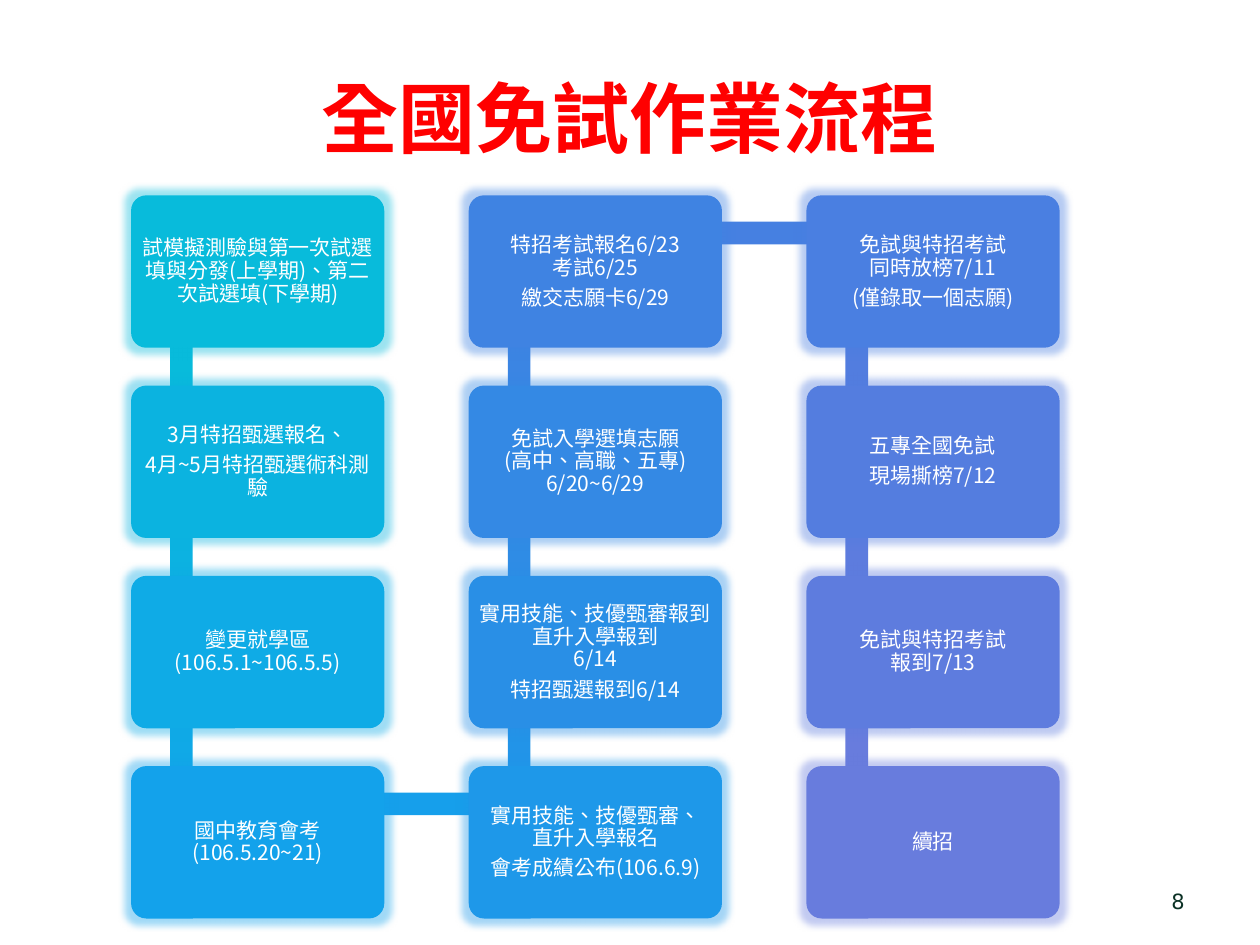
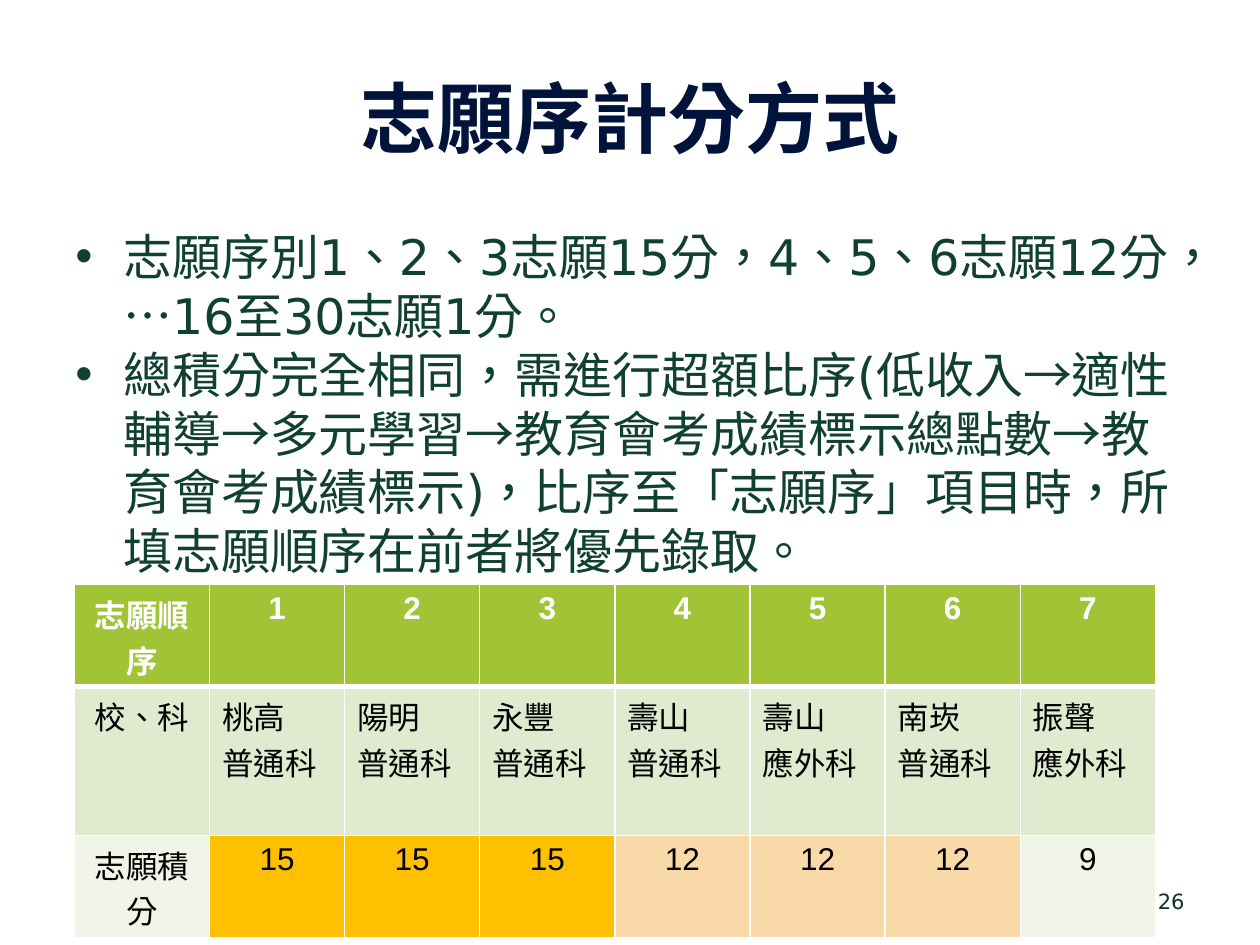
from copy import deepcopy

from lxml.etree import SubElement
from pptx import Presentation
from pptx.dml.color import RGBColor
from pptx.enum.shapes import MSO_SHAPE as Shape
from pptx.enum.text import MSO_ANCHOR as Anchor, PP_ALIGN as Align
from pptx.oxml.ns import qn
from pptx.util import Inches, Pt

SANS, CJK_SC, CJK_TC = "DejaVu Sans", "Noto Sans CJK SC", "Noto Sans CJK TC"
WHITE, BLACK, RED, NAVY = "FFFFFF", "000000", "FF0000", "00133A"
BODY_GREEN, PAGE_GREEN = "104031", "0C3226"
HEADER_GREEN, SCHOOL_GREEN, PALE_GREEN = "A0C435", "DFEACE", "F0F5E8"
GOLD, PEACH = "FFC000", "FAD9A8"

BOX_WIDTH, BOX_HEIGHT = 2.01, 1.21
LEFT, TOP, COLUMN_STEP, ROW_STEP = 1.04, 1.55, 2.68, 1.51
BAR_THICKNESS = 0.18
TABLE_ROW_HEIGHTS = (0.81, 1.18, 0.81)

# Paragraphs of the step, colour of its box, colour of the bar to the next step
STEPS = [
    (["試模擬測驗與第一次試選填與分發(上學期)、第二次試選填(下學期)"], "08BBDB", "08BBDB"),
    (["3月特招甄選報名、", "4月~5月特招甄選術科測驗"], "0BB3E0", "0CB2E1"),
    (["變更就學區(106.5.1~106.5.5)"], "0FABE6", "10A9E7"),
    (["國中教育會考(106.5.20~21)"], "13A2EB", "169FEB"),
    (["實用技能、技優甄審、\n直升入學報名", "會考成績公布(106.6.9)"], "1E98E9", "2294E8"),
    (["實用技能、技優甄審報到\n直升入學報到\n6/14", "特招甄選報到6/14"], "298FE6", "2F8CE5"),
    (["免試入學選填志願\n(高中、高職、五專)\n6/20~6/29"], "3489E4", "3B85E3"),
    (["特招考試報名6/23\n考試6/25", "繳交志願卡6/29"], "3F83E2", "4680E1"),
    (["免試與特招考試\n同時放榜7/11", "(僅錄取一個志願)"], "4A7FE1", "527DDF"),
    (["五專全國免試", "現場撕榜7/12"], "547DDF", "5D7CDE"),
    (["免試與特招考試\n報到7/13"], "5E7CDE", "687CDD"),
    (["續招"], "687CDD", None),
]

RULES = [
    "志願序別1、2、3志願15分，4、5、6志願12分，…16至30志願1分。",
    "總積分完全相同，需進行超額比序(低收入→適性輔導→多元學習→教育會考成績標示總點數→"
    "教育會考成績標示)，比序至「志願序」項目時，所填志願順序在前者將優先錄取。",
]

CHOICES = [
    ("桃高\n普通科", 15), ("陽明\n普通科", 15), ("永豐\n普通科", 15), ("壽山\n普通科", 12),
    ("壽山\n應外科", 12), ("南崁\n普通科", 12), ("振聲\n應外科", 9),
]
SCORE_FILLS = {15: GOLD, 12: PEACH, 9: PALE_GREEN}


def rgb(value):
    return RGBColor.from_string(value)


def set_attributes(target, values):
    for name, value in values.items():
        setattr(target, name, value)


def write(frame, paragraphs, size, color, latin, east_asian, bold=False, bullet=False, **layout):
    """Fill a text frame; layout holds paragraph attributes such as alignment."""
    for index, text in enumerate(paragraphs):
        paragraph = frame.paragraphs[0] if index == 0 else frame.add_paragraph()
        if bullet:
            add_bullet(paragraph)
        paragraph.text = text
        set_attributes(paragraph, layout)
        for run in paragraph.runs:
            set_attributes(run.font, {"size": Pt(size), "bold": bold, "name": latin})
            run.font.color.rgb = rgb(color)
            run.font._element.set("lang", "zh-TW")
            SubElement(run.font._element, qn("a:ea"), typeface=east_asian)
        for line_break in paragraph._p.findall(qn("a:br")):
            line_break.insert(0, deepcopy(paragraph.runs[0].font._element))


def add_bullet(paragraph):
    properties = paragraph._p.get_or_add_pPr()
    properties.set("marL", str(Inches(0.38)))
    properties.set("indent", str(Inches(-0.38)))
    SubElement(properties, qn("a:buFont"), typeface="Arial")
    SubElement(properties, qn("a:buChar"), char="•")


def add_text(slide, place, paragraphs, anchor=Anchor.MIDDLE, **style):
    frame = slide.shapes.add_textbox(*map(Inches, place)).text_frame
    set_attributes(frame, {"word_wrap": True, "vertical_anchor": anchor})
    write(frame, paragraphs, **style)


def add_slide(presentation, title, title_color, title_font, page_number):
    """Add a blank slide with the shared title and page number."""
    slide = presentation.slides.add_slide(presentation.slide_layouts[6])
    add_text(slide, (0.5, 0.3, 9, 1.25), [title], size=44, color=title_color, bold=True,
             latin=title_font, east_asian=CJK_SC, alignment=Align.CENTER)
    add_text(slide, (7.17, 6.95, 2.33, 0.4), [page_number], size=12, color=PAGE_GREEN,
             latin=SANS, east_asian=CJK_TC, alignment=Align.RIGHT)
    return slide


def add_block(slide, kind, place, color):
    shape = slide.shapes.add_shape(kind, *map(Inches, place))
    shape.shadow.inherit = False
    shape.fill.solid()
    shape.fill.fore_color.rgb = rgb(color)
    shape.line.fill.background()
    return shape


def add_glow(shape, color):
    effects = shape._element.spPr.find(qn("a:effectLst"))
    glow = SubElement(effects, qn("a:glow"), rad=str(Pt(8)))
    glow_color = SubElement(glow, qn("a:srgbClr"), val=color)
    SubElement(glow_color, qn("a:alpha"), val="40000")


def add_step_box(slide, left, top, paragraphs, color):
    box = add_block(slide, Shape.ROUNDED_RECTANGLE, (left, top, BOX_WIDTH, BOX_HEIGHT), color)
    box.adjustments[0] = 0.1
    add_glow(box, color)
    frame = box.text_frame
    set_attributes(frame, dict.fromkeys(("margin_left", "margin_right"), Inches(0.01)))
    set_attributes(frame, dict.fromkeys(("margin_top", "margin_bottom"), Inches(0.05)))
    set_attributes(frame, {"word_wrap": True, "vertical_anchor": Anchor.MIDDLE})
    write(frame, paragraphs, 12, WHITE, CJK_SC, CJK_SC, alignment=Align.CENTER,
          line_spacing=Pt(13), space_after=Pt(4.2))


def add_bar(slide, start, end, color):
    """Join two neighbouring boxes, given by their top left corners."""
    left, top = min(start, end)
    if start[0] == end[0]:
        place = (left + 0.31, top + 0.3, BAR_THICKNESS, ROW_STEP)
    else:
        place = (left + 0.41, top + 0.21, COLUMN_STEP, BAR_THICKNESS)
    add_block(slide, Shape.RECTANGLE, place, color)


def step_corner(index):
    """Steps run down the first column, up the second and down the third."""
    column, row = divmod(index, 4)
    if column == 1:
        row = 3 - row
    return LEFT + column * COLUMN_STEP, TOP + row * ROW_STEP


def add_flow(slide):
    for index, (paragraphs, color, bar_color) in enumerate(STEPS):
        corner = step_corner(index)
        if bar_color:
            add_bar(slide, corner, step_corner(index + 1), bar_color)
        add_step_box(slide, *corner, paragraphs, color)


def add_borders(cell, top, bottom):
    properties = cell._tc.get_or_add_tcPr()
    for side, width in {"L": 1, "R": 1, "T": top, "B": bottom}.items():
        line = SubElement(properties, qn(f"a:ln{side}"), w=str(Pt(width)))
        fill = SubElement(line, qn("a:solidFill"))
        SubElement(fill, qn("a:srgbClr"), val=WHITE)


def add_score_table(slide):
    schools, scores = zip(*CHOICES)
    rows = [
        ["志願順序", *range(1, len(CHOICES) + 1)],
        ["校、科", *schools],
        ["志願積分", *scores],
    ]
    fills = [
        [HEADER_GREEN] * len(rows[0]),
        [SCHOOL_GREEN] * len(rows[0]),
        [PALE_GREEN, *(SCORE_FILLS[score] for score in scores)],
    ]
    place = map(Inches, (0.59, 4.64, 8.58, sum(TABLE_ROW_HEIGHTS)))
    table = slide.shapes.add_table(len(rows), len(rows[0]), *place).table
    for row, height in zip(table.rows, TABLE_ROW_HEIGHTS):
        row.height = Inches(height)
    for row, values in enumerate(rows):
        header = row == 0
        for column, value in enumerate(values):
            cell = table.cell(row, column)
            add_borders(cell, top=3 if row == 1 else 1, bottom=3 if header else 1)
            cell.fill.solid()
            cell.fill.fore_color.rgb = rgb(fills[row][column])
            school = row == 1 and column > 0
            write(cell.text_frame, str(value).split("\n"), 18, WHITE if header else BLACK,
                  "Arial", CJK_TC, bold=header,
                  alignment=Align.LEFT if school else Align.CENTER)


def main():
    presentation = Presentation()
    presentation.slide_width, presentation.slide_height = Inches(10), Inches(7.5)

    add_flow(add_slide(presentation, "全國免試作業流程", RED, CJK_SC, "8"))

    scoring = add_slide(presentation, "志願序計分方式", NAVY, SANS, "26")
    add_text(scoring, (0.5, 1.75, 9, 4.95), RULES, anchor=Anchor.TOP, size=28,
             color=BODY_GREEN, latin=SANS, east_asian=CJK_TC, bullet=True,
             line_spacing=Pt(33.6))
    add_score_table(scoring)

    presentation.save("out.pptx")


if __name__ == "__main__":
    main()
